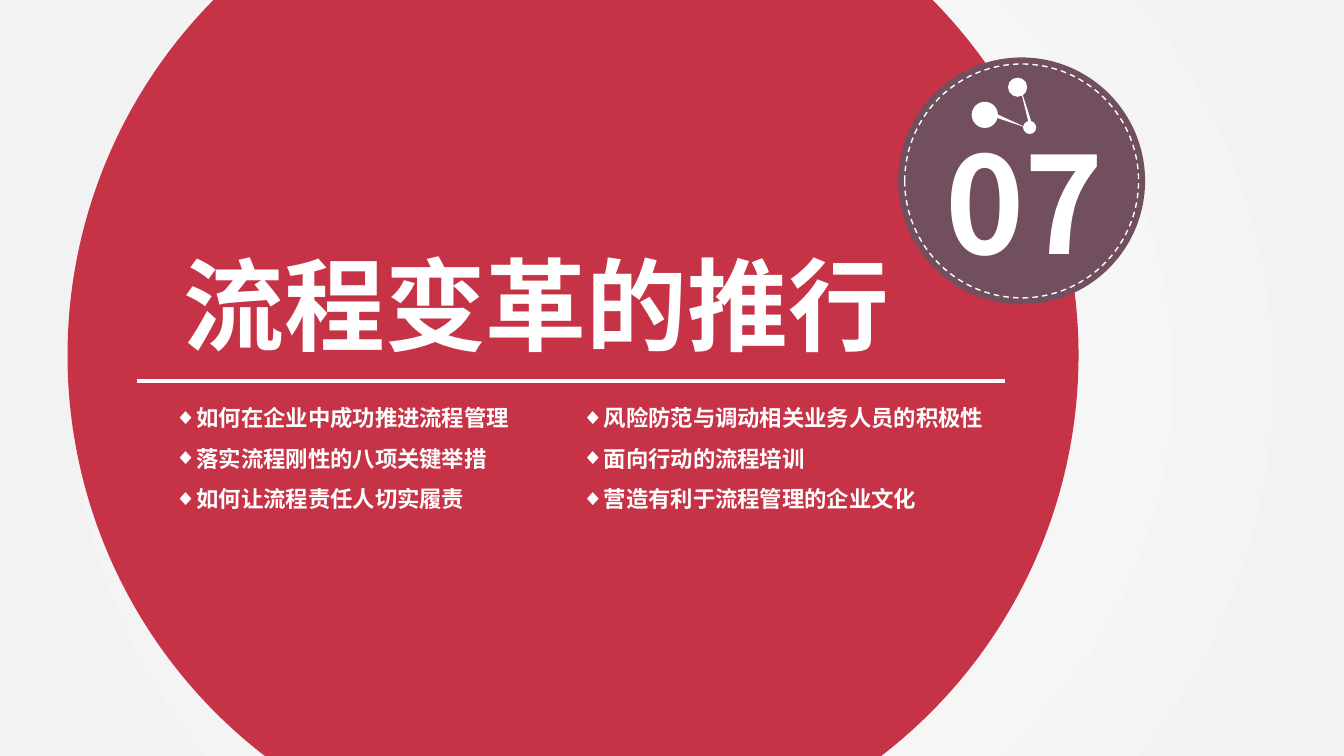
from dataclasses import dataclass
from typing import Any, Optional

from lxml import etree
from pptx import Presentation
from pptx import util as u
from pptx.dml.color import RGBColor
from pptx.enum import dml, shapes, text
from pptx.oxml import parse_xml
from pptx.oxml.ns import nsdecls, qn

FONT = "Noto Sans CJK SC"
COLORS = {"red": "C73346", "plum": "724F5F", "white": "FFFFFF", "grey": "F2F2F2"}
CELL = u.Inches(0.1)  # one column or row of the grid
COLS, ROWS = 133.33, 75
OVAL, TRIANGLE = shapes.MSO_SHAPE.OVAL, shapes.MSO_SHAPE.ISOSCELES_TRIANGLE


@dataclass
class Mark:
    """A shape given by its centre and size in grid cells."""
    cx: float
    cy: float
    w: float
    h: float
    color: str = "white"
    kind: Any = OVAL
    rotation: float = 0
    outlined: bool = False


@dataclass
class Box:
    """A text area in grid cells."""
    left: float
    top: float
    width: float
    height: float
    size: float
    lines: list[str]
    bullet: Optional[str] = None
    spacing: float = 1.0
    wrap: bool = True


DISC = Mark(56.85, 35.25, 100.3, 100.3, "red")
BADGE = Mark(101.35, 17.95, 24.5, 24.5, "plum")
BADGE_DETAILS = [
    Mark(BADGE.cx, BADGE.cy, 23.2, 23.2, outlined=True),
    Mark(97.7, 11.4, 2.6, 2.6),
    Mark(102.15, 12.65, 1.3, 1.3),
    Mark(99.75, 11.85, 0.5, 4.5, kind=TRIANGLE, rotation=111.7),
    Mark(100.95, 8.65, 1.9, 1.9),
    Mark(101.65, 10.25, 0.3, 4.1, kind=TRIANGLE, rotation=344.3),
]
NUMBER = Box(92.8, 11.4, 18.6, 17.2, 96, ["07"], wrap=False)
TITLE = Box(17.2, 23.6, 76.5, 13.1, 72, ["流程变革的推行"])
TOPICS = [
    ["如何在企业中成功推进流程管理", "落实流程刚性的八项关键举措", "如何让流程责任人切实履责"],
    ["风险防范与调动相关业务人员的积极性", "面向行动的流程培训", "营造有利于流程管理的企业文化"],
]
LISTS = [Box(16.3 + 40.4 * i, 38.3, 48.4, 13.1, 16, lines, "◆", 1.5)
         for i, lines in enumerate(TOPICS)]


def grid(n: float) -> u.Emu:
    return u.Emu(round(n * CELL))


def rgb(name: str) -> RGBColor:
    return RGBColor.from_string(COLORS[name])


def set_all(obj: Any, **values: Any) -> None:
    for name, value in values.items():
        setattr(obj, name, value)


def draw_mark(parent: Any, mark: Mark) -> None:
    sp = parent.add_shape(mark.kind, grid(mark.cx - mark.w / 2), grid(mark.cy - mark.h / 2),
                          grid(mark.w), grid(mark.h))
    sp.shadow.inherit = False
    sp.rotation = mark.rotation
    if mark.outlined:
        sp.fill.background()
        sp.line.color.rgb = rgb(mark.color)
        set_all(sp.line, width=u.Pt(1), dash_style=dml.MSO_LINE.DASH)
    else:
        sp.fill.solid()
        sp.fill.fore_color.rgb = rgb(mark.color)
        sp.line.fill.background()


def write_box(sp: Any, box: Box) -> None:
    set_all(sp, left=grid(box.left), top=grid(box.top),
            width=grid(box.width), height=grid(box.height))
    tf = sp.text_frame
    set_all(tf, word_wrap=box.wrap, auto_size=text.MSO_AUTO_SIZE.SHAPE_TO_FIT_TEXT,
            vertical_anchor=text.MSO_ANCHOR.TOP)
    for i, line in enumerate(box.lines):
        p = tf.add_paragraph() if i else tf.paragraphs[0]
        set_all(p, alignment=text.PP_ALIGN.LEFT, line_spacing=box.spacing,
                space_before=u.Pt(0))
        if box.bullet:
            ppr = p._p.get_or_add_pPr()
            indent = u.Inches(0.19)
            ppr.set("marL", str(indent))
            ppr.set("indent", str(-indent))
            etree.SubElement(ppr, qn("a:buChar")).set("char", box.bullet)
        r = p.add_run()
        r.text = line
        set_all(r.font, size=u.Pt(box.size), bold=True, name=FONT)
        r.font.color.rgb = rgb("white")
        etree.SubElement(r.font._element, qn("a:ea")).set("typeface", FONT)


def paint_background(s: Any) -> None:
    """Radial gradient from a white centre to grey edges."""
    fill = s.background.fill
    fill.solid()
    solid = s.element.find(".//" + qn("p:bgPr")).find(qn("a:solidFill"))
    stops = "".join(f'<a:gs pos="{pos}"><a:srgbClr val="{COLORS[name]}"/></a:gs>'
                    for pos, name in ((0, "white"), (91000, "grey")))
    gradient = parse_xml(
        f'<a:gradFill {nsdecls("a")} rotWithShape="1"><a:gsLst>{stops}</a:gsLst>'
        '<a:path path="circle"><a:fillToRect l="50000" t="50000" r="50000" b="50000"/>'
        '</a:path></a:gradFill>')
    solid.getparent().replace(solid, gradient)


def draw_badge(s: Any) -> None:
    group = s.shapes.add_group_shape().shapes
    draw_mark(group, BADGE)
    write_box(group.add_textbox(0, 0, CELL, CELL), NUMBER)
    for mark in BADGE_DETAILS:
        draw_mark(group, mark)


def draw_rule(s: Any) -> None:
    rule = s.shapes.add_connector(shapes.MSO_CONNECTOR.STRAIGHT,
                                  grid(13.6), grid(37.8), grid(99.7), grid(37.8))
    rule.line.color.rgb = rgb("white")
    rule.line.width = u.Pt(2.25)
    etree.SubElement(rule.element.spPr, qn("a:effectLst"))


def fill_placeholder(s: Any, sp: Any, box: Box) -> None:
    """Write a placeholder and bring it in front of the shapes drawn so far."""
    s.shapes.element.append(sp.element)
    write_box(sp, box)


def main() -> None:
    prs = Presentation()
    set_all(prs, slide_width=grid(COLS), slide_height=grid(ROWS))
    s = prs.slides.add_slide(prs.slide_layouts.get_by_name("Two Content"))
    title, *bodies = list(s.placeholders)
    paint_background(s)
    draw_mark(s.shapes, DISC)
    draw_badge(s)
    fill_placeholder(s, title, TITLE)
    draw_rule(s)
    for body, box in zip(bodies, LISTS):
        fill_placeholder(s, body, box)
    prs.save("out.pptx")


if __name__ == "__main__":
    main()
